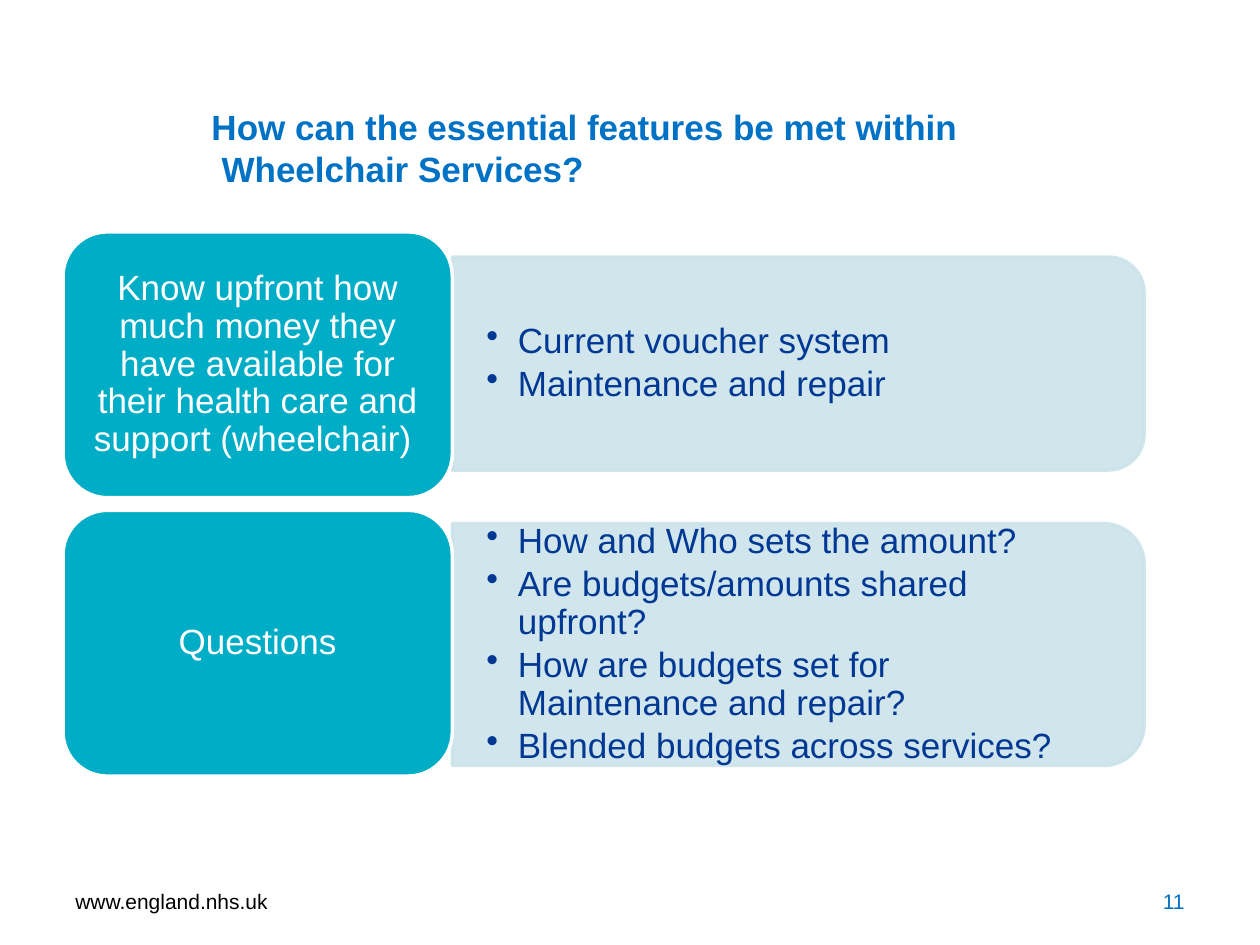
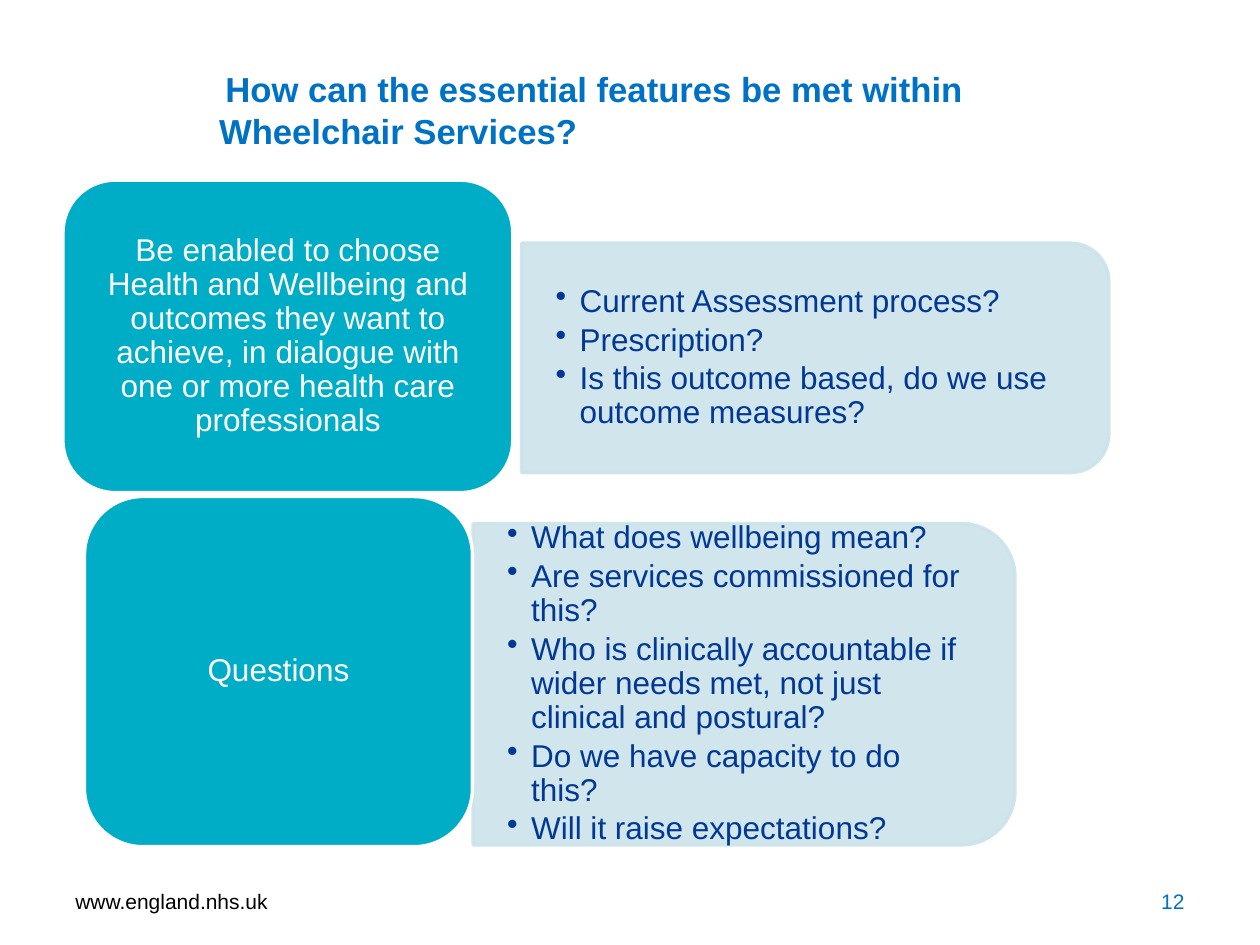
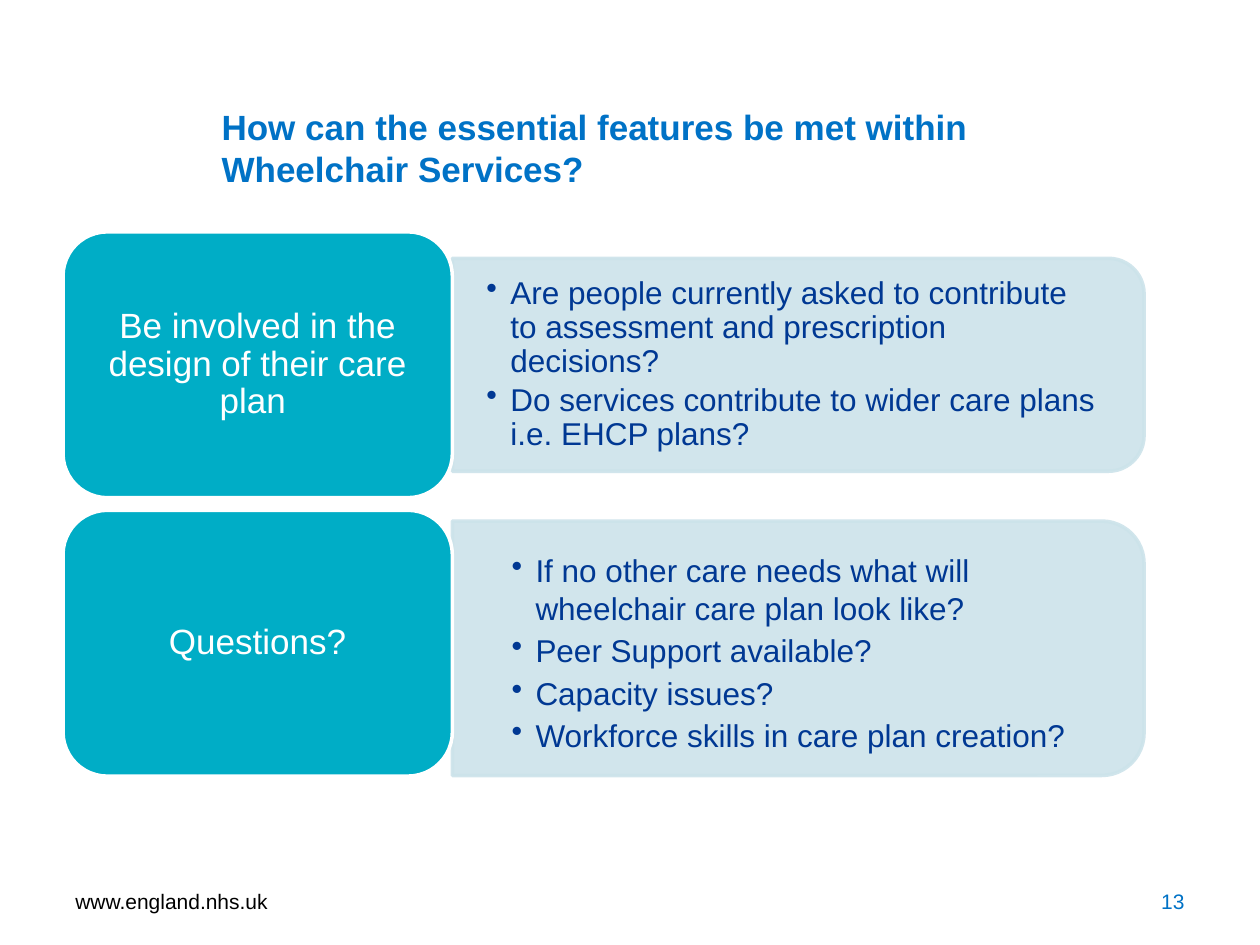
from dataclasses import dataclass

from lxml.etree import SubElement
from pptx import Presentation
from pptx.dml.color import RGBColor
from pptx.enum.shapes import MSO_SHAPE as Preset
from pptx.enum.text import MSO_ANCHOR as Anchor, PP_ALIGN as Align
from pptx.oxml.ns import qn
from pptx.util import Emu, Inches, Pt

WHITE = RGBColor(0xFF, 0xFF, 0xFF)
BLACK = RGBColor(0x00, 0x00, 0x00)
TEAL = RGBColor(0x00, 0xAD, 0xC6)
PALE_BLUE = RGBColor(0xCC, 0xE3, 0xEA)
NAVY = RGBColor(0x00, 0x38, 0x93)
BLUE = RGBColor(0x00, 0x72, 0xC6)

FONT = "Arial"
SLIDE_WIDTH, SLIDE_HEIGHT = Inches(10), Inches(7.5)
COLUMNS, ROWS = 100, 75  # square cells
CELL = SLIDE_WIDTH // COLUMNS
CORNER_INSET = 0.0488  # room a default rounded corner takes, as a share of the height

TITLE = "How can the essential features be met within\vWheelchair Services?"
FOOTER = "www.england.nhs.uk"
FIRST_NUMBER = 11


@dataclass(frozen=True)
class Box:
    """A rectangle in grid cells."""
    left: float
    top: float
    width: float
    height: float

    def lengths(self) -> tuple[Emu, ...]:
        return tuple(Emu(round(cells * CELL))
                     for cells in (self.left, self.top, self.width, self.height))


@dataclass(frozen=True)
class Bullets:
    size: float
    hanging: float
    indent: float
    line_spacing: float | None = 0.9
    anchor: Anchor = Anchor.MIDDLE


@dataclass(frozen=True)
class Row:
    label: str
    label_box: Box
    label_size: float
    points: tuple[str, ...]
    panel_box: Box
    bullets: Bullets


@dataclass(frozen=True)
class Title:
    box: Box
    size: float
    indent: float
    first_line: float
    bottom_margin: float


@dataclass(frozen=True)
class Page:
    title: Title
    rows: tuple[Row, ...]


FOOTER_BOX = Box(5, 69.5, 23.3, 4)
NUMBER_BOX = Box(71.7, 69.5, 23.3, 4)
TITLE_BOX = Box(5, 8.2, 80.5, 7.3)
UPPER_LABEL = Box(5, 18.4, 30.9, 21.1)
LOWER_LABEL = Box(5, 40.5, 30.9, 21.1)

LARGE = Bullets(size=20, hanging=2.5, indent=2.5)
MEDIUM = Bullets(size=18, hanging=1.9, indent=1.9)
INDENTED = Bullets(size=18, hanging=1.9, indent=3.9, line_spacing=None, anchor=Anchor.TOP)

PAGES = (
    Page(
        Title(TITLE_BOX, 20, indent=11.6, first_line=-0.8, bottom_margin=0.5),
        (
            Row("Know upfront how much money they have available for their "
                "health care and support (wheelchair) ", UPPER_LABEL, 20,
                ("Current voucher system", "Maintenance and repair"),
                Box(35.9, 20.4, 54.9, 16.9), LARGE),
            Row("Questions", LOWER_LABEL, 20,
                ("How and Who sets the amount?",
                 "Are budgets/amounts shared upfront?",
                 "How are budgets set for Maintenance and repair?",
                 "Blended budgets across services?"),
                Box(35.9, 41.55, 54.9, 19.2), LARGE),
        ),
    ),
    Page(
        Title(Box(5, 3.6, 80.5, 8.4), 19.8, indent=11.4, first_line=0.5, bottom_margin=0),
        (
            Row("Be enabled to choose Health and Wellbeing and outcomes they want to "
                "achieve, in dialogue with one or more health care professionals",
                Box(5, 14.3, 35.7, 24.8), 18,
                ("Current Assessment process?",
                 "Prescription?",
                 "Is this outcome based, do we use outcome measures?"),
                Box(41.4, 19.3, 46.6, 18.2), MEDIUM),
            Row("Questions", Box(6.7, 39.4, 30.8, 27.8), 18,
                ("What does wellbeing mean?",
                 "Are services commissioned for this?",
                 "Who is clinically accountable if wider needs met, "
                 "not just clinical and postural?",
                 "Do we have capacity to do this?",
                 "Will it raise expectations?"),
                Box(37.55, 41.55, 43, 25.5), MEDIUM),
        ),
    ),
    Page(
        Title(TITLE_BOX, 20, indent=11.6, first_line=0, bottom_margin=0.5),
        (
            Row("Be involved in the design of their care plan ", UPPER_LABEL, 20,
                ("Are people currently asked to contribute to assessment "
                 "and prescription decisions?",
                 "Do services contribute to wider care plans i.e. EHCP plans?"),
                Box(35.9, 20.5, 54.9, 16.9), MEDIUM),
            Row("Questions?", LOWER_LABEL, 20,
                ("If no other care needs what will wheelchair care plan look like?",
                 "Peer Support available?",
                 "Capacity issues?",
                 "Workforce skills in care plan creation?"),
                Box(35.9, 41.35, 54.9, 20.2), INDENTED),
        ),
    ),
)


def set_font(paragraph, size: float, color: RGBColor, bold: bool = False) -> None:
    for run in paragraph.runs:
        font = run.font
        font.name, font.size, font.bold = FONT, Pt(size), bold
        font.color.rgb = color


def set_indent(paragraph, indent: float, first_line: float):
    """Indent the paragraph by grid cells and return its properties element."""
    properties = paragraph._p.get_or_add_pPr()
    properties.set("marL", str(round(indent * CELL)))
    properties.set("indent", str(round(first_line * CELL)))
    return properties


def set_margins(text_frame, horizontal: float, vertical: float) -> None:
    text_frame.margin_left = text_frame.margin_right = Emu(round(horizontal * CELL))
    text_frame.margin_top = text_frame.margin_bottom = Emu(round(vertical * CELL))


def add_text(slide, box: Box, text: str, anchor: Anchor = Anchor.MIDDLE):
    text_frame = slide.shapes.add_textbox(*box.lengths()).text_frame
    text_frame.word_wrap = True
    text_frame.vertical_anchor = anchor
    text_frame.text = text
    return text_frame


def add_filled_shape(slide, preset: Preset, box: Box, fill: RGBColor, line: RGBColor):
    shape = slide.shapes.add_shape(preset, *box.lengths())
    shape.shadow.inherit = False
    shape.fill.solid()
    shape.fill.fore_color.rgb = fill
    shape.line.color.rgb = line
    shape.line.width = Pt(2)
    return shape


def add_title(slide, title: Title) -> None:
    text_frame = add_text(slide, title.box, TITLE, Anchor.BOTTOM)
    text_frame.margin_bottom = Emu(round(title.bottom_margin * CELL))
    paragraph = text_frame.paragraphs[0]
    set_indent(paragraph, title.indent, title.first_line)
    set_font(paragraph, title.size, BLUE, bold=True)


def add_footer(slide, number: int) -> None:
    address = add_text(slide, FOOTER_BOX, FOOTER).paragraphs[0]
    set_font(address, 12, BLACK)
    page_number = add_text(slide, NUMBER_BOX, str(number)).paragraphs[0]
    page_number.alignment = Align.RIGHT
    set_font(page_number, 12, BLUE)


def add_panel(slide, box: Box) -> None:
    """Draw a panel rounded on its right side: a top-rounded shape turned by 90 degrees."""
    upright = Box(box.left + (box.width - box.height) / 2,
                  box.top + (box.height - box.width) / 2,
                  box.height, box.width)
    shape = add_filled_shape(slide, Preset.ROUND_2_SAME_RECTANGLE, upright,
                             PALE_BLUE, PALE_BLUE)
    shape.rotation = 90
    for color in shape._element.spPr.iter(qn("a:srgbClr")):
        SubElement(color, qn("a:alpha"), val="90000")


def add_points(slide, row: Row) -> None:
    panel, style = row.panel_box, row.bullets
    inset = panel.height * CORNER_INSET
    text_box = Box(panel.left, panel.top + inset,
                   panel.width - inset, panel.height - 2 * inset)
    text_frame = add_text(slide, text_box, "\n".join(row.points), style.anchor)
    set_margins(text_frame, 2.7, 1.4)
    for paragraph in text_frame.paragraphs:
        properties = set_indent(paragraph, style.indent, -style.hanging)
        SubElement(properties, qn("a:buChar"), char="•")
        paragraph.line_spacing = style.line_spacing
        paragraph.space_after = Pt(0.15 * style.size)
        set_font(paragraph, style.size, NAVY)


def add_label(slide, row: Row) -> None:
    shape = add_filled_shape(slide, Preset.ROUNDED_RECTANGLE, row.label_box, TEAL, WHITE)
    text_frame = shape.text_frame
    text_frame.word_wrap = True
    text_frame.vertical_anchor = Anchor.MIDDLE
    set_margins(text_frame, 0.8, 0.4)
    text_frame.text = row.label
    paragraph = text_frame.paragraphs[0]
    paragraph.alignment = Align.CENTER
    paragraph.line_spacing = 0.9
    set_font(paragraph, row.label_size, WHITE)


def main() -> None:
    presentation = Presentation()
    presentation.slide_width, presentation.slide_height = SLIDE_WIDTH, SLIDE_HEIGHT
    blank = presentation.slide_layouts[6]
    for number, page in enumerate(PAGES, FIRST_NUMBER):
        slide = presentation.slides.add_slide(blank)
        for row in page.rows:
            add_panel(slide, row.panel_box)
            add_points(slide, row)
            add_label(slide, row)
        add_footer(slide, number)
        add_title(slide, page.title)
    presentation.save("out.pptx")


if __name__ == "__main__":
    main()
